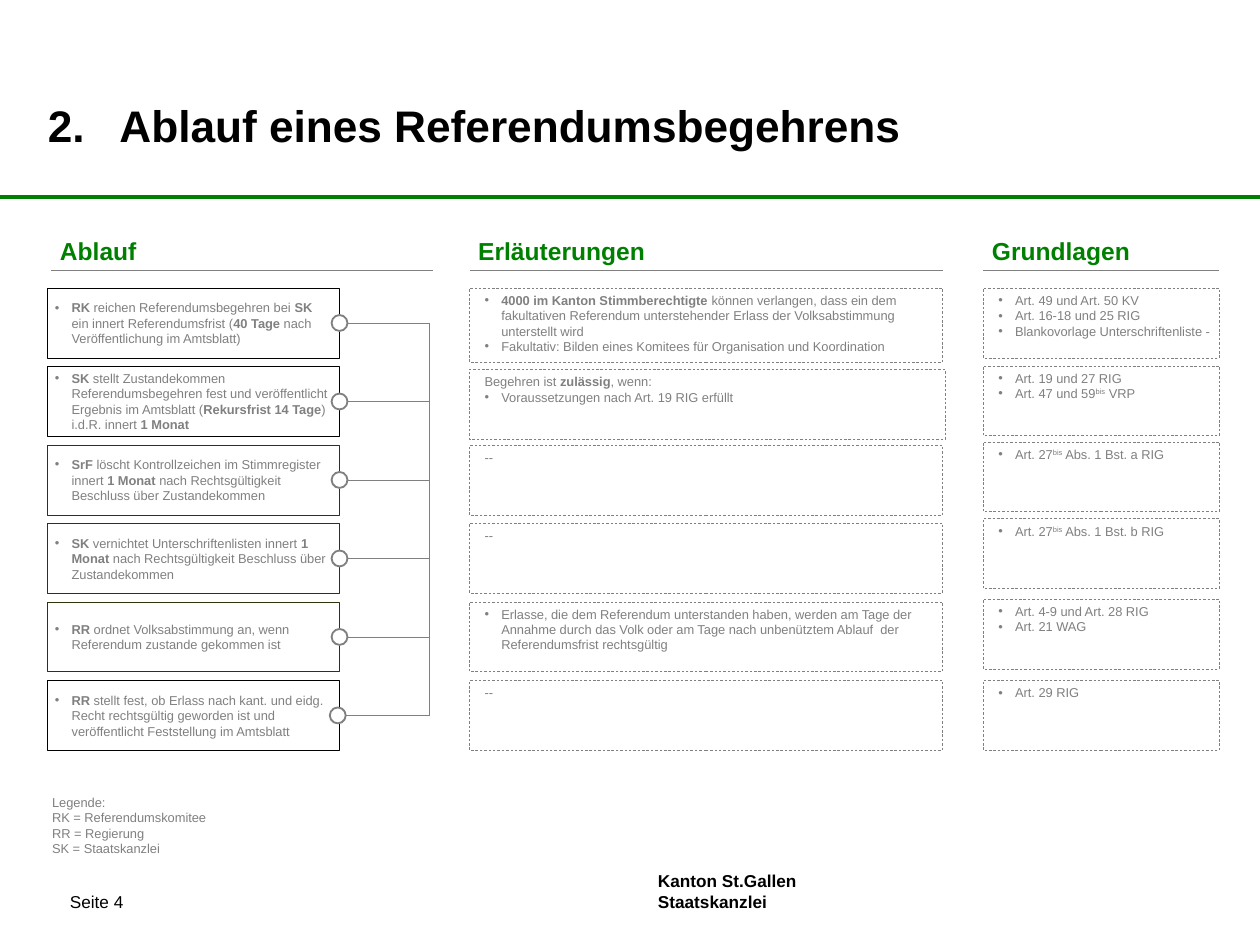
import dataclasses

import lxml.etree
import pptx
import pptx.dml.color
import pptx.enum.dml
import pptx.enum.shapes
import pptx.enum.text
import pptx.oxml.ns
import pptx.util
from pptx.util import Inches

Anchor = pptx.enum.text.MSO_ANCHOR
Shape = pptx.enum.shapes.MSO_SHAPE


@dataclasses.dataclass(frozen=True)
class Theme:
    font: str = "Arial"
    black: str = "000000"
    olive: str = "2B350A"
    gray: str = "808080"
    green: str = "008000"
    white: str = "FFFFFF"
    title: float = 36
    heading: float = 20
    footer: float = 14
    body: float = 10.5


@dataclasses.dataclass(frozen=True)
class Span:
    text: str
    bold: bool = False
    raised: bool = False


@dataclasses.dataclass(frozen=True)
class Line:
    spans: tuple
    bullet: bool = False


THEME = Theme()
ROW_TOP, ROW_PITCH, ROW_HEIGHT = 3.26, 0.888, 0.79
STEP_LEFT, STEP_WIDTH = 0.54, 3.3
RAIL_X = 4.86
CIRCLE = 0.18
STEP_INSETS = (0.08, 0.05, 0.13, 0.05)
NOTE_INSETS = (0.17, 0.05, 0.08, 0.05)
NO_INSETS = (0, 0, 0, 0)


def bold(text):
    return Span(text, bold=True)


def plain(*spans):
    return Line(tuple(Span(s) if isinstance(s, str) else s for s in spans))


def item(*spans):
    return dataclasses.replace(plain(*spans), bullet=True)


BIS = Span("bis", raised=True)
HEADINGS = [("Ablauf", 0.58, 4.32), ("Erläuterungen", 5.31, 5.35), ("Grundlagen", 11.12, 2.67)]

STEPS = [
    (THEME.black, 3.75, item(bold("RK "), "reichen Referendumsbegehren bei ", bold("SK"),
                             " ein innert Referendumsfrist (", bold("40 Tage "),
                             "nach Veröffentlichung im Amtsblatt)")),
    (THEME.black, 3.75, item(bold("SK "), "stellt Zustandekommen Referendumsbegehren fest und "
                             "veröffentlicht Ergebnis im Amtsblatt (", bold("Rekursfrist 14 Tage"),
                             ") i.d.R. innert ", bold("1 Monat"))),
    (THEME.olive, 3.75, item(bold("SrF"), " löscht Kontrollzeichen im Stimmregister innert ",
                             bold("1 Monat "), "nach Rechtsgültigkeit Beschluss über Zustandekommen")),
    (THEME.olive, 3.75, item(bold("SK"), " vernichtet Unterschriftenlisten innert ", bold("1 Monat "),
                             "nach Rechtsgültigkeit Beschluss über Zustandekommen")),
    (THEME.olive, 3.75, item(bold("RR "), "ordnet Volksabstimmung an, wenn Referendum "
                             "zustande gekommen ist")),
    (THEME.black, 3.73, item(bold("RR"), " stellt fest, ob Erlass nach kant. und eidg. Recht rechtsgültig "
                             "geworden ist und veröffentlicht Feststellung im Amtsblatt")),
]

EXPLANATIONS = [
    (3.26, 5.35, 0.84, [
        item(bold("4000 im Kanton Stimmberechtigte "), "können verlangen, dass ein dem fakultativen "
             "Referendum unterstehender Erlass der Volksabstimmung unterstellt wird"),
        item("Fakultativ: Bilden eines Komitees für Organisation und Koordination")]),
    (4.18, 5.38, ROW_HEIGHT, [plain("Begehren ist ", bold("zulässig"), ", wenn:"),
                              item("Voraussetzungen nach Art. 19 RIG erfüllt")]),
    (5.04, 5.35, ROW_HEIGHT, [plain("--")]),
    (5.92, 5.35, ROW_HEIGHT, [plain("--")]),
    (6.81, 5.35, ROW_HEIGHT, [
        item("Erlasse, die dem Referendum unterstanden haben, werden am Tage der Annahme durch das Volk "
             "oder am Tage nach unbenütztem Ablauf  der Referendumsfrist rechtsgültig")]),
    (7.7, 5.35, ROW_HEIGHT, [plain("--")]),
]

SOURCES = [
    (3.26, [item("Art. 49 und Art. 50 KV"), item("Art. 16-18 und 25 RIG"),
            item("Blankovorlage Unterschriftenliste -")]),
    (4.14, [item("Art. 19 und 27 RIG"), item("Art. 47 und 59", BIS, " VRP")]),
    (5.0, [item("Art. 27", BIS, " Abs. 1 Bst. a RIG")]),
    (5.87, [item("Art. 27", BIS, " Abs. 1 Bst. b RIG")]),
    (6.78, [item("Art. 4-9 und Art. 28 RIG"), item("Art. 21 WAG")]),
    (7.7, [item("Art. 29 RIG")]),
]

LEGEND = [plain("Legende:"), plain("RK = Referendumskomitee"), plain("RR = Regierung"),
          plain("SK = Staatskanzlei")]


def rgb(color):
    return pptx.dml.color.RGBColor.from_string(color)


def add_element(parent, tag, **attributes):
    return lxml.etree.SubElement(parent, pptx.oxml.ns.qn(tag), attributes)


def write_text(frame, lines, size, color, insets, anchor=Anchor.TOP):
    frame.word_wrap = True
    frame.auto_size = pptx.enum.text.MSO_AUTO_SIZE.NONE
    frame.vertical_anchor = anchor
    (frame.margin_left, frame.margin_top,
     frame.margin_right, frame.margin_bottom) = map(Inches, insets)
    for index, line in enumerate(lines):
        para = frame.paragraphs[0] if index == 0 else frame.add_paragraph()
        para.alignment = pptx.enum.text.PP_ALIGN.LEFT
        if line.bullet:
            properties = para._p.get_or_add_pPr()
            properties.set("marL", str(Inches(0.19)))
            properties.set("indent", str(-Inches(0.19)))
            add_element(properties, "a:buFont", typeface=THEME.font)
            add_element(properties, "a:buChar", char="•")
        for part in line.spans:
            span = para.add_run()
            span.text = part.text
            span.font.name = THEME.font
            span.font.size = pptx.util.Pt(size)
            span.font.bold = part.bold
            span.font.color.rgb = rgb(color)
            if part.raised:
                span.font._element.set("baseline", "30000")


def add_text(page, place, lines, size, color, insets, anchor=Anchor.TOP):
    box = page.shapes.add_textbox(*map(Inches, place))
    write_text(box.text_frame, lines, size, color, insets, anchor)


def add_outline(page, kind, place, color, width=0.5):
    shape = page.shapes.add_shape(kind, *map(Inches, place))
    shape.shadow.inherit = False
    shape.fill.background()
    shape.line.color.rgb = rgb(color)
    shape.line.width = pptx.util.Pt(width)
    return shape


def add_rule(page, start, end, color=THEME.gray, width=0.5):
    rule = page.shapes.add_connector(pptx.enum.shapes.MSO_CONNECTOR.STRAIGHT,
                                     *map(Inches, (*start, *end)))
    rule.line.color.rgb = rgb(color)
    rule.line.width = pptx.util.Pt(width)
    add_element(rule._element.spPr, "a:effectLst")
    return rule


def add_title(page, text):
    title = page.shapes.title
    title.left, title.top, title.width, title.height = map(Inches, (0.54, 0.21, 13.07, 1.5))
    properties = title.text_frame.paragraphs[0]._p.get_or_add_pPr()
    tabs = add_element(properties, "a:tabLst")
    add_element(tabs, "a:tab", pos=str(Inches(0.81)), algn="l")
    write_text(title.text_frame, [plain(bold(text))], THEME.title, THEME.black, NO_INSETS, Anchor.BOTTOM)


def add_heading(page, text, left, width):
    add_text(page, (left, 2.66, width, 0.36), [plain(bold(text))], THEME.heading, THEME.green,
             (0.1, 0.05, 0.1, 0.05), Anchor.MIDDLE)
    add_rule(page, (left, 3.06), (left + width, 3.06))


def add_step(page, top, color, circle_left, line):
    box = add_outline(page, Shape.RECTANGLE, (STEP_LEFT, top, STEP_WIDTH, ROW_HEIGHT), color)
    write_text(box.text_frame, [line], THEME.body, THEME.gray, STEP_INSETS, Anchor.MIDDLE)
    middle = top + ROW_HEIGHT / 2
    branch = add_rule(page, (STEP_LEFT + STEP_WIDTH, middle), (RAIL_X, middle))
    branch.begin_connect(box, 3)
    circle = add_outline(page, Shape.OVAL, (circle_left, middle - CIRCLE / 2, CIRCLE, CIRCLE),
                         THEME.gray, 1.5)
    circle.fill.solid()
    circle.fill.fore_color.rgb = rgb(THEME.white)


def add_note(page, place, lines):
    box = add_outline(page, Shape.RECTANGLE, place, THEME.gray)
    box.line.dash_style = pptx.enum.dml.MSO_LINE.DASH
    write_text(box.text_frame, lines, THEME.body, THEME.gray, NOTE_INSETS)


def main():
    deck = pptx.Presentation()
    deck.slide_width, deck.slide_height = Inches(14.25), Inches(10.67)
    page = deck.slides.add_slide(deck.slide_layouts[5])

    add_title(page, "2.\tAblauf eines Referendumsbegehrens")
    add_rule(page, (0, 2.23), (14.25, 2.23), THEME.green, 3)
    for heading in HEADINGS:
        add_heading(page, *heading)

    for row, step in enumerate(STEPS):
        add_step(page, ROW_TOP + row * ROW_PITCH, *step)
    first_middle = ROW_TOP + ROW_HEIGHT / 2
    add_rule(page, (RAIL_X, first_middle), (RAIL_X, first_middle + 5 * ROW_PITCH))
    for top, width, height, lines in EXPLANATIONS:
        add_note(page, (5.31, top, width, height), lines)
    for top, lines in SOURCES:
        add_note(page, (11.12, top, 2.67, ROW_HEIGHT), lines)

    add_text(page, (0.43, 8.94, 12.4, 0.85), LEGEND, THEME.body, THEME.gray, (0.16, 0.05, 0, 0.05))
    add_text(page, (0.79, 10.1, 3.19, 0.2), [plain("Seite 4")], THEME.footer, THEME.black,
             NO_INSETS, Anchor.MIDDLE)
    for top, text in ((9.85, "Kanton St.Gallen"), (10.09, "Staatskanzlei")):
        add_text(page, (7.44, top, 5.68, 0.24), [plain(bold(text))], THEME.footer, THEME.black, NO_INSETS)
    deck.save("out.pptx")


if __name__ == "__main__":
    main()
